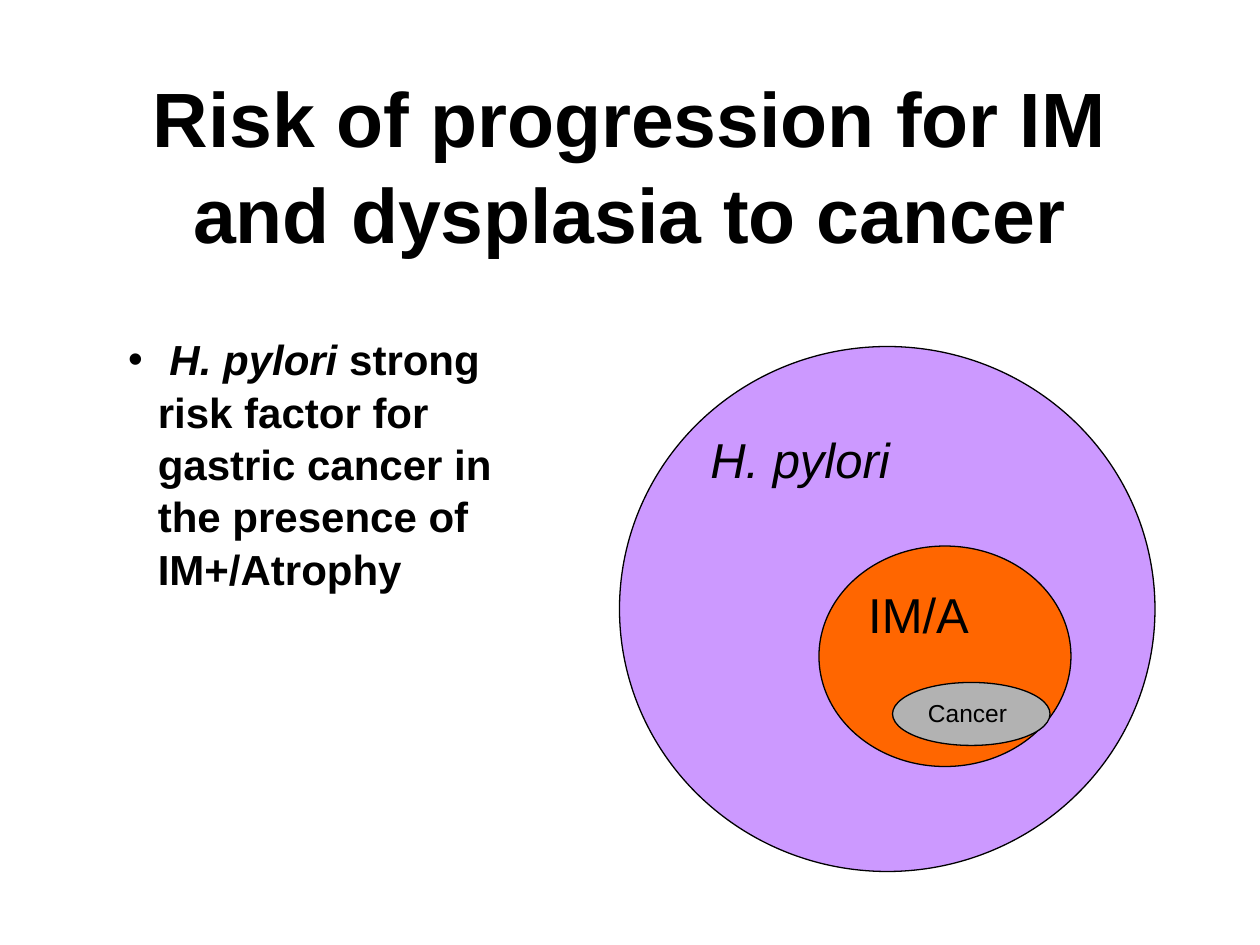
import pptx
import pptx.util
import pptx.dml.color
import pptx.enum.shapes
import pptx.enum.text
import pptx.oxml
import pptx.oxml.ns
from pptx.util import Pt

COLORS = {
    "text": "000000",
    "outline": "000000",
    "pylori": "CC99FF",
    "metaplasia": "FF6600",
    "cancer": "B2B2B2",
}
FONT = "Arial"
LINE_SPACING = 1.04


def rgb(name):
    return pptx.dml.color.RGBColor.from_string(COLORS[name])


def style_run(run, size, bold=False, italic=False):
    run.font.name = FONT
    run.font.size = Pt(size)
    run.font.bold = bold
    run.font.italic = italic
    run.font.color.rgb = rgb("text")


deck = pptx.Presentation()
deck.slide_width, deck.slide_height = Pt(720), Pt(540)
slide = deck.slides.add_slide(deck.slide_layouts[1])

# Title
title = slide.shapes.title
title.left, title.top, title.width, title.height = Pt(54), Pt(48), Pt(612), Pt(90)
title.text_frame.text = "Risk of progression for IM and dysplasia to cancer"
title.text_frame.vertical_anchor = pptx.enum.text.MSO_ANCHOR.MIDDLE
heading = title.text_frame.paragraphs[0]
heading.alignment = pptx.enum.text.PP_ALIGN.CENTER
heading.line_spacing = LINE_SPACING
style_run(heading.runs[0], 44, bold=True)

# Nested risk groups, from widest to narrowest
risk_groups = [
    ("H. pylori", "pylori", (354, 198, 306, 300), 28, True),
    ("IM/A", "metaplasia", (468, 312, 144, 126), 28, False),
    ("Cancer", "cancer", (510, 390, 90, 36), 14, False),
]
for label, color, bounds, size, italic in risk_groups:
    group = slide.shapes.add_shape(
        pptx.enum.shapes.MSO_SHAPE.OVAL, *[Pt(length) for length in bounds])
    group.shadow.inherit = False
    group.fill.solid()
    group.fill.fore_color.rgb = rgb(color)
    group.line.color.rgb = rgb("outline")
    group.line.width = Pt(0.75)
    group.text_frame.text = label
    group.text_frame.word_wrap = True
    group.text_frame.vertical_anchor = pptx.enum.text.MSO_ANCHOR.TOP
    caption = group.text_frame.paragraphs[0]
    caption.alignment = pptx.enum.text.PP_ALIGN.LEFT
    style_run(caption.runs[0], size, italic=italic)

# Bulleted finding
finding = slide.placeholders[1]
finding.left, finding.top, finding.width, finding.height = Pt(66), Pt(186), Pt(258), Pt(181.5)
statement = finding.text_frame.paragraphs[0]
statement.line_spacing = LINE_SPACING
statement.space_before = Pt(0)
for words, italic in [
    (" H. pylori", True),
    (" strong risk factor for gastric cancer in the presence of IM+/Atrophy", False),
]:
    part = statement.add_run()
    part.text = words
    style_run(part, 24, bold=True, italic=italic)

# Hanging indent and bullet
bullet_format = statement._p.get_or_add_pPr()
bullet_format.set("marL", str(Pt(17)))
bullet_format.set("indent", str(-Pt(17)))
bullet = pptx.oxml.parse_xml(
    f'<a:buChar {pptx.oxml.ns.nsdecls("a")} char="•"/>')
bullet_format.append(bullet)

deck.save("out.pptx")
